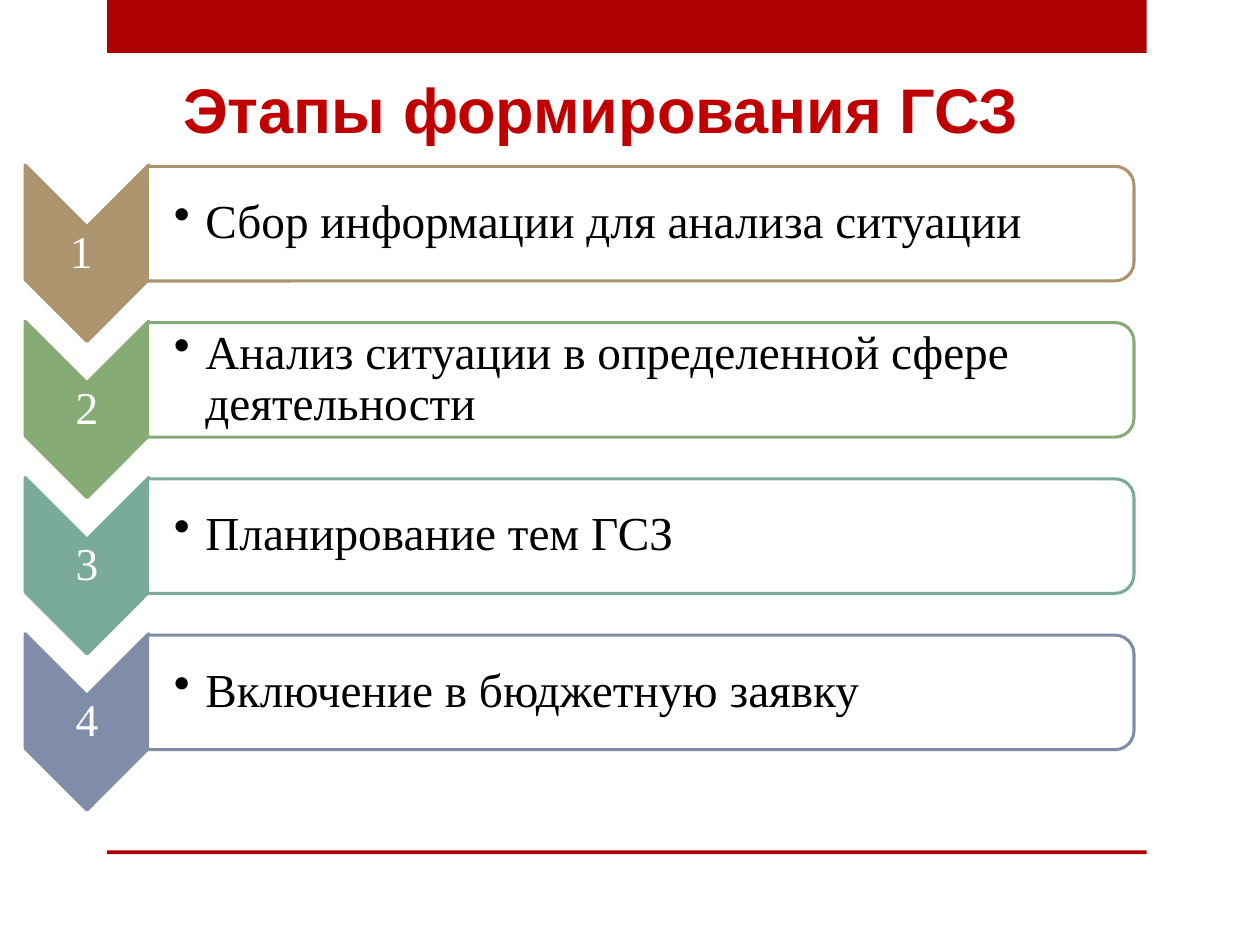
"""Build a slide with four numbered stages under a title."""
from dataclasses import dataclass

from lxml.etree import SubElement as Sub
from pptx import Presentation
from pptx.dml.color import RGBColor as Rgb
from pptx.enum.shapes import MSO_SHAPE as Shape
from pptx.enum.text import MSO_ANCHOR as Anchor, PP_ALIGN as Align
from pptx.oxml.ns import qn
from pptx.util import Inches, Pt


@dataclass(frozen=True)
class Theme:
    red: str = "AD0101"
    title: str = "C00000"
    white: str = "FFFFFF"
    black: str = "000000"
    hues: tuple = ("AC956E", "87AB74", "7AAA9A", "808DA9")
    head: str = "Arial"
    body: str = "Times New Roman"
    big: int = 36
    mid: int = 27
    small: int = 26
    line: float = 1.75


THEME = Theme()
STAGES = (
    ("1 ", "Сбор информации для анализа ситуации"),
    ("2", "Анализ ситуации в определенной сфере деятельности"),
    ("3", "Планирование тем ГСЗ"),
    ("4", "Включение в бюджетную заявку"),
)
TOP, STEP = 1.52, 1.24


def add_form(slide, kind, box, fill, edge=None, turn=0):
    form = slide.shapes.add_shape(kind, *map(Inches, box))
    form.shadow.inherit = False
    form.rotation = turn
    form.fill.solid()
    form.fill.fore_color.rgb = Rgb.from_string(fill)
    if edge:
        form.line.color.rgb = Rgb.from_string(edge)
        form.line.width = Pt(THEME.line)
    else:
        form.line.fill.background()
    return form


def fade(form, share):
    color = form.fill._xPr.find(qn("a:solidFill"))[0]
    Sub(color, qn("a:alpha"), val=str(share * 1000))


def add_text(slide, box, words, size, color, pads, face=THEME.body,
             align=Align.CENTER, anchor=Anchor.MIDDLE, bold=False, dot=False):
    frame = slide.shapes.add_textbox(*map(Inches, box)).text_frame
    frame.word_wrap = True
    frame.vertical_anchor = anchor
    frame.margin_left, frame.margin_top, frame.margin_right, frame.margin_bottom = map(Inches, pads)
    para = frame.paragraphs[0]
    para.text = words
    para.alignment = align
    para.line_spacing = 0.9
    if dot:
        add_dot(para)
    font = para.font
    font.name, font.size, font.bold = face, Pt(size), bold
    font.color.rgb = Rgb.from_string(color)


def add_dot(para):
    props = para._p.get_or_add_pPr()
    props.set("marL", str(Inches(0.25)))
    props.set("indent", str(Inches(-0.25)))
    Sub(props, qn("a:buChar"), char="•")


def add_stage(slide, top, hue, mark, words):
    add_form(slide, Shape.CHEVRON, (-0.01, top, 1.4, 0.98), hue, hue, 90)
    add_text(slide, (0.2, top + 0.28, 0.98, 0.42), mark, THEME.small,
             THEME.white, (0.02,) * 4)
    panel = add_form(slide, Shape.ROUND_2_SAME_RECTANGLE,
                     (4.63, top - 3.66, 0.91, 7.83), THEME.white, hue, 90)
    fade(panel, 90)
    add_text(slide, (1.17, top - 0.16, 7.78, 0.82), words, THEME.mid,
             THEME.black, (0.21, 0.02, 0.02, 0.02), align=Align.LEFT, dot=True)


def main():
    deck = Presentation()
    deck.slide_width, deck.slide_height = Inches(10), Inches(7.5)
    slide = deck.slides.add_slide(deck.slide_layouts[6])
    for top, high in ((0, 0.42), (6.75, 0.03)):
        add_form(slide, Shape.RECTANGLE, (0.85, top, 8.25, high), THEME.red)
    add_text(slide, (1.06, 0.76, 7.42, 0.47), "Этапы формирования ГСЗ",
             THEME.big, THEME.title, (0.11, 0.06, 0.11, 0.06), THEME.head,
             anchor=Anchor.BOTTOM, bold=True)
    for row, (hue, stage) in enumerate(zip(THEME.hues, STAGES)):
        add_stage(slide, TOP + row * STEP, hue, *stage)
    deck.save("out.pptx")


if __name__ == "__main__":
    main()
